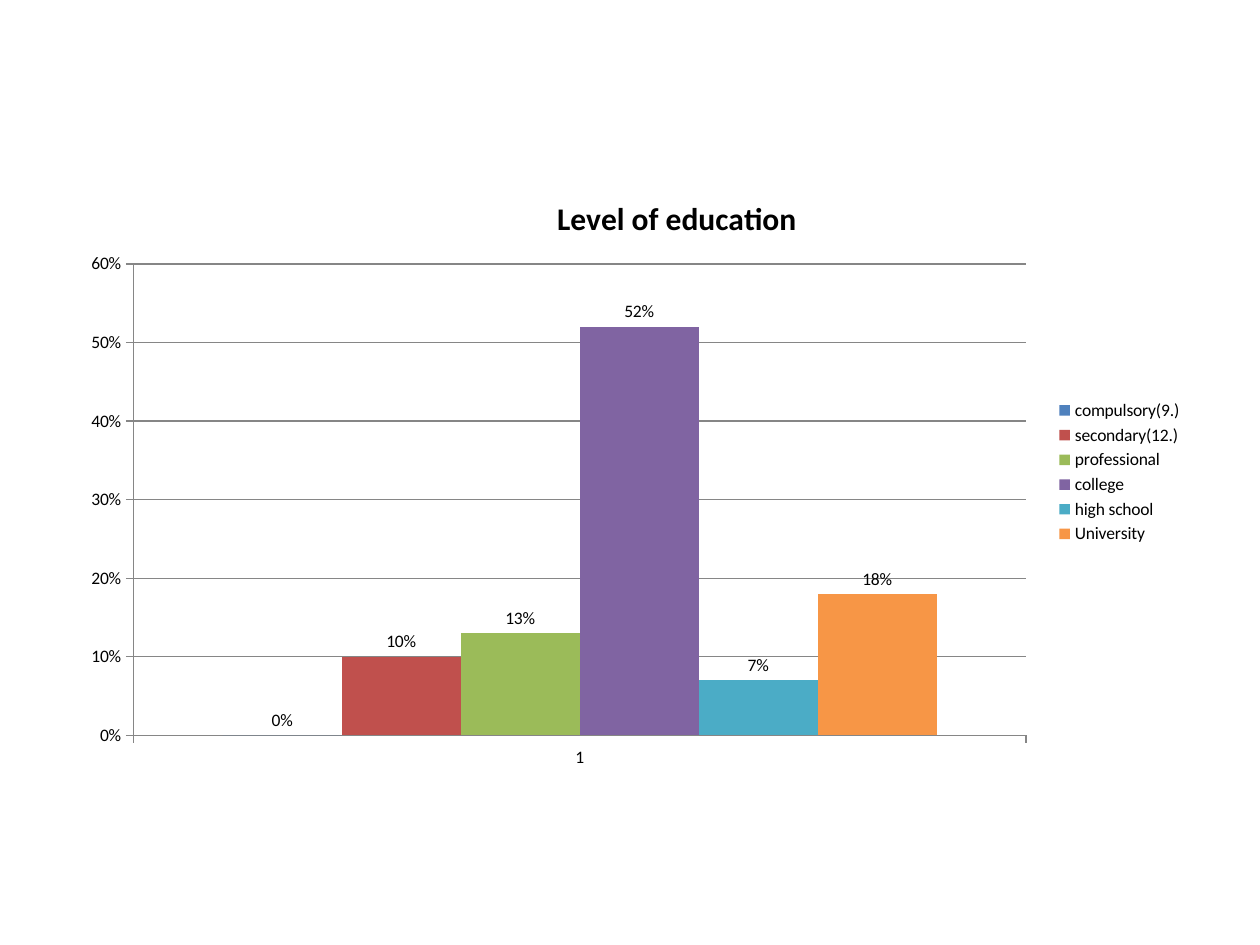
import pptx
import pptx.chart.data
import pptx.dml.color
import pptx.enum.chart
import pptx.oxml
import pptx.oxml.ns
import pptx.util
from pptx.util import Cm

COLORS = {
    "text": "000000",
    "axis": "868686",
    "compulsory(9.)": "4F81BD",
    "secondary(12.)": "C0504D",
    "professional": "9BBB59",
    "college": "8064A2",
    "high school": "4BACC6",
    "University": "F79646",
}

EDUCATION_SHARES = {
    "compulsory(9.)": 0,
    "secondary(12.)": 0.1,
    "professional": 0.13,
    "college": 0.52,
    "high school": 0.07,
    "University": 0.18,
}


class SlideBuilder:
    font_name = "Calibri"
    body_size = 10
    title_size = 18
    percent = "0%"

    def __init__(self, slide):
        self.slide = slide

    def color(self, name):
        return pptx.dml.color.RGBColor.from_string(COLORS[name])

    def style_font(self, font, size, bold=False):
        font.name = self.font_name
        font.size = pptx.util.Pt(size)
        font.bold = bold
        font.color.rgb = self.color("text")

    def style_line(self, line):
        line.color.rgb = self.color("axis")
        line.width = pptx.util.Pt(0.75)

    def place(self, parent, index, **settings):
        qn = pptx.oxml.ns.qn
        for old in parent.findall(qn("c:layout")):
            parent.remove(old)
        entries = "".join(f'<c:{tag} val="{value}"/>' for tag, value in settings.items())
        parent.insert(index, pptx.oxml.parse_xml(
            f'<c:layout {pptx.oxml.ns.nsdecls("c")}>'
            f"<c:manualLayout>{entries}</c:manualLayout></c:layout>"))

    def title(self, chart, text):
        chart.has_title = True
        frame = chart.chart_title.text_frame
        frame.text = text
        self.style_font(frame.paragraphs[0].font, self.title_size, bold=True)
        self.place(chart.chart_title._element, 1,
                   xMode="edge", yMode="edge", x=0.43, y=0.04)

    def axes(self, chart, maximum, step):
        for axis in (chart.category_axis, chart.value_axis):
            axis.major_tick_mark = pptx.enum.chart.XL_TICK_MARK.OUTSIDE
            axis.minor_tick_mark = pptx.enum.chart.XL_TICK_MARK.NONE
            self.style_line(axis.format.line)
        shares = chart.value_axis
        shares.minimum_scale = 0
        shares.maximum_scale = maximum
        shares.major_unit = step
        shares.has_major_gridlines = True
        self.style_line(shares.major_gridlines.format.line)
        shares.tick_labels.number_format = self.percent
        shares.tick_labels.number_format_is_linked = False

    def legend(self, chart):
        chart.has_legend = True
        chart.legend.position = pptx.enum.chart.XL_LEGEND_POSITION.RIGHT
        chart.legend.include_in_layout = False
        self.style_font(chart.legend.font, self.body_size)

    def series(self, plot):
        for level in plot.series:
            level.format.fill.solid()
            level.format.fill.fore_color.rgb = self.color(level.name)
            level.invert_if_negative = False
            labels = level.data_labels
            labels.show_value = True
            labels.number_format = self.percent
            labels.number_format_is_linked = False
            labels.position = pptx.enum.chart.XL_LABEL_POSITION.OUTSIDE_END
            self.style_font(labels.font, self.body_size)

    def column_chart(self, title, category, shares, left, top, width, height):
        data = pptx.chart.data.CategoryChartData(number_format=self.percent)
        data.categories = [category]
        for level, share in shares.items():
            data.add_series(level, [share])
        chart = self.slide.shapes.add_chart(
            pptx.enum.chart.XL_CHART_TYPE.COLUMN_CLUSTERED,
            left, top, width, height, data).chart
        self.style_font(chart.font, self.body_size)
        self.title(chart, title)
        self.axes(chart, maximum=0.6, step=0.1)
        self.legend(chart)
        plot = chart.plots[0]
        plot.vary_by_categories = False
        plot.gap_width = 150
        plot.overlap = 0
        self.series(plot)
        self.place(plot._element.getparent(), 0, layoutTarget="inner",
                   xMode="edge", yMode="edge", x=0.06, y=0.16, w=0.79, h=0.77)


def main():
    deck = pptx.Presentation()
    deck.slide_width = Cm(25.4)
    deck.slide_height = Cm(19.05)
    builder = SlideBuilder(deck.slides.add_slide(deck.slide_layouts[6]))
    builder.column_chart("Level of education", "1", EDUCATION_SHARES,
                         Cm(1.32), Cm(3.35), Cm(22.78), Cm(12.34))
    deck.save("out.pptx")


if __name__ == "__main__":
    main()
